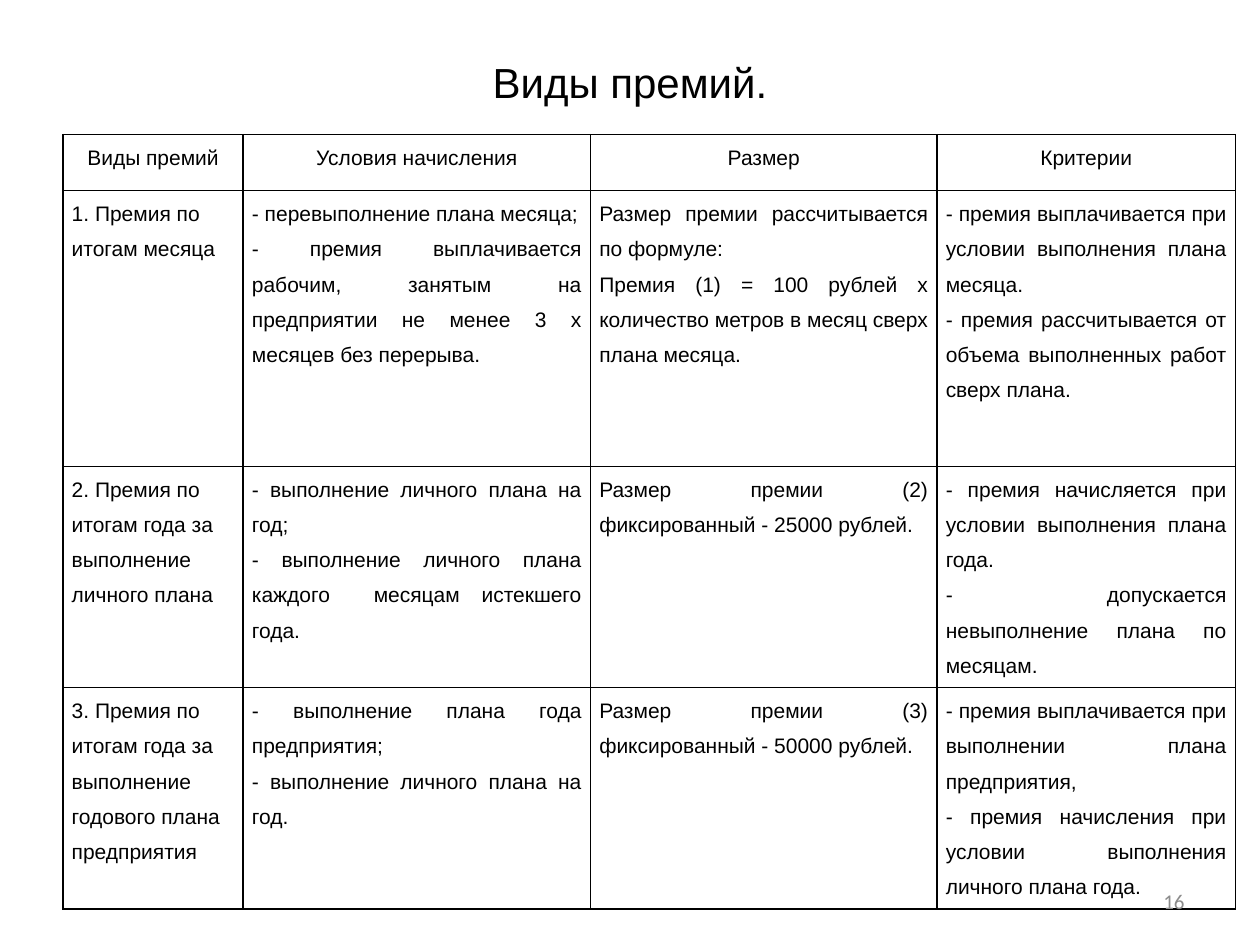
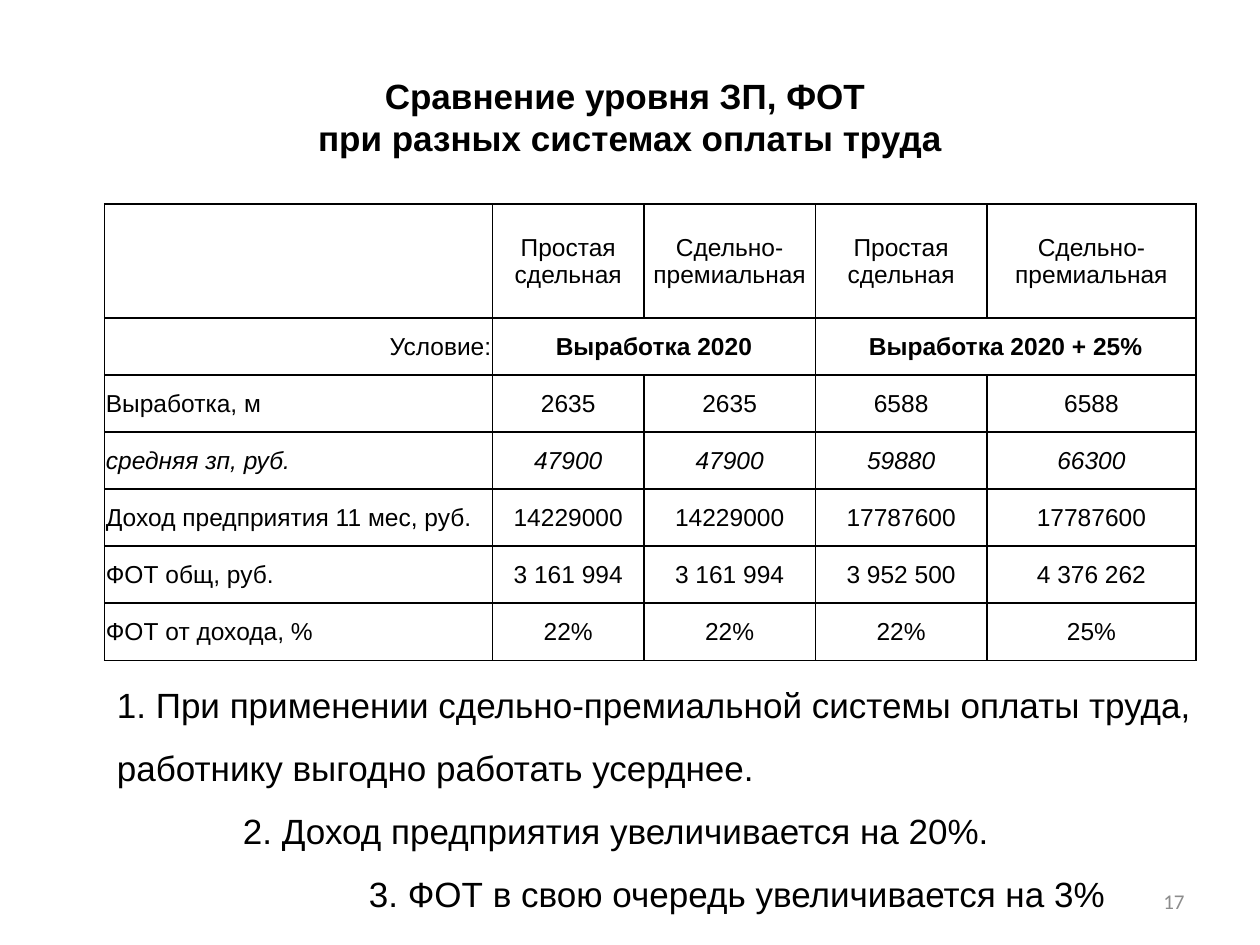
from lxml import etree
from pptx import Presentation
from pptx.dml.color import RGBColor
from pptx.enum.text import MSO_ANCHOR, PP_ALIGN
from pptx.oxml.ns import qn
from pptx.util import Pt

LEFT, CENTER, RIGHT, JUSTIFY = PP_ALIGN.LEFT, PP_ALIGN.CENTER, PP_ALIGN.RIGHT, PP_ALIGN.JUSTIFY
TOP, MIDDLE = MSO_ANCHOR.TOP, MSO_ANCHOR.MIDDLE
COLORS = {"text": "000000", "border": "000000", "number": "8C8C8C"}


def write(tf, text, size, align, color="text", font="Arial", bold=False, italic=False, spacing=None):
    tf.text = text
    for p in tf.paragraphs:
        p.alignment = align
        p.line_spacing = spacing
        for r in p.runs:
            r.font.size = Pt(size)
            r.font.name = font
            r.font.bold = bold
            r.font.italic = italic
            r.font.color.rgb = RGBColor.from_string(COLORS[color])


def add_grid(s, left, top, widths, heights, margins, anchor):
    frame = s.shapes.add_table(len(heights), len(widths), Pt(left), Pt(top),
                               Pt(sum(widths)), Pt(sum(heights)))
    table = frame.table
    table.first_row = table.horz_banding = False
    for column, width in zip(table.columns, widths):
        column.width = Pt(width)
    for row, height in zip(table.rows, heights):
        row.height = Pt(height)
    for cell in table.iter_cells():
        cell.margin_left, cell.margin_top, cell.margin_right, cell.margin_bottom = map(Pt, margins)
        cell.vertical_anchor = anchor
        cell.fill.background()
        tcPr = cell.fill._xPr
        for i, side in enumerate(("a:lnL", "a:lnR", "a:lnT", "a:lnB")):
            ln = etree.Element(qn(side), w=str(Pt(1)))
            fill = etree.SubElement(ln, qn("a:solidFill"))
            etree.SubElement(fill, qn("a:srgbClr"), val=COLORS["border"])
            tcPr.insert(i, ln)
    return table


prs = Presentation()
prs.slide_width, prs.slide_height = Pt(720), Pt(540)
titles = [
    ("Виды премий.", 50, 24, False),
    ("Сравнение уровня ЗП, ФОТ \vпри разных системах оплаты труда", 90, 20, True),
]
bonuses = [
    ["Виды премий", "Условия начисления", "Размер", "Критерии"],
    ["1. Премия по итогам месяца",
     "- перевыполнение плана месяца;\n"
     "- премия выплачивается рабочим, занятым на предприятии не менее 3 х месяцев без перерыва.",
     "Размер премии рассчитывается по формуле:\n"
     "Премия (1) = 100 рублей х количество метров в месяц сверх плана месяца.",
     "- премия выплачивается при условии выполнения плана месяца.\n"
     "- премия рассчитывается от объема выполненных работ сверх плана."],
    ["2. Премия по итогам года за выполнение личного плана",
     "- выполнение личного плана на год;\n"
     "- выполнение личного плана каждого  месяцам истекшего года.",
     "Размер премии (2) фиксированный - 25000 рублей.",
     "- премия начисляется при условии выполнения плана года.\n"
     "- допускается невыполнение плана по месяцам."],
    ["3. Премия по итогам года за выполнение годового плана предприятия",
     "- выполнение плана года предприятия;\n- выполнение личного плана на год.",
     "Размер премии (3) фиксированный - 50000 рублей.",
     "- премия выплачивается при выполнении плана предприятия,\n"
     "- премия начисления при условии выполнения личного плана года."],
]
comparison = [
    ["", "Простая сдельная", "Сдельно-премиальная", "Простая сдельная", "Сдельно-премиальная"],
    ["Условие:", "Выработка 2020", "", "Выработка 2020 + 25%", ""],
    ["Выработка, м", "2635", "2635", "6588", "6588"],
    ["средняя зп, руб.", "47900", "47900", "59880", "66300"],
    ["Доход предприятия 11 мес, руб.", "14229000", "14229000", "17787600", "17787600"],
    ["ФОТ общ, руб.", "3 161 994", "3 161 994", "3 952 500", "4 376 262"],
    ["ФОТ от дохода, %", "22%", "22%", "22%", "25%"],
]
CONDITION_ROW, SALARY_ROW = 1, 3
conclusions = [
    "1. При применении сдельно-премиальной системы оплаты труда, работнику выгодно работать усерднее.",
    "2. Доход предприятия увеличивается на 20%.",
    "3. ФОТ в свою очередь увеличивается на 3%",
]

for title, height, size, bold in titles:
    s = prs.slides.add_slide(prs.slide_layouts[5])
    sp = s.shapes.title
    sp.left, sp.top, sp.width, sp.height = Pt(36), Pt(21.6), Pt(648), Pt(height)
    sp.text_frame.vertical_anchor = MIDDLE
    write(sp.text_frame, title, size, CENTER, bold=bold)

bonus_slide, comparison_slide = prs.slides

table = add_grid(bonus_slide, 36, 77, [103, 198.5, 198, 170.5], [32, 157.5, 126.5, 126.5],
                 (5, 0, 5, 0), TOP)
for i, row in enumerate(bonuses):
    for j, text in enumerate(row):
        align = CENTER if i == 0 else LEFT if j == 0 else JUSTIFY
        write(table.cell(i, j).text_frame, text, 12, align, spacing=1.5)

table = add_grid(comparison_slide, 59.75, 116.5, [221.75, 86.5, 98, 98, 119.5],
                 [65.2] + [32.6] * 6, (0.75, 0.75, 0.75, 0), MIDDLE)
for j in (1, 3):
    table.cell(CONDITION_ROW, j).merge(table.cell(CONDITION_ROW, j + 1))
for i, row in enumerate(comparison):
    for j, text in enumerate(row):
        if text:
            align = CENTER if j else RIGHT if i == CONDITION_ROW else LEFT
            write(table.cell(i, j).text_frame, text, 14, align,
                  bold=i == CONDITION_ROW and j > 0, italic=i == SALARY_ROW)

sp = comparison_slide.shapes.add_textbox(Pt(59.75), Pt(394.5), Pt(648), Pt(112.5))
tf = sp.text_frame
tf.word_wrap = True
tf.vertical_anchor = MIDDLE
write(tf, "\n".join(conclusions), 20, LEFT, spacing=1.5)
for level, p in enumerate(tf.paragraphs):
    p._p.get_or_add_pPr().set("marL", str(Pt(72 * level)))

for number, s in enumerate(prs.slides, 16):
    sp = s.shapes.add_textbox(Pt(516), Pt(500.5), Pt(168), Pt(28.75))
    sp.text_frame.word_wrap = True
    sp.text_frame.vertical_anchor = MIDDLE
    write(sp.text_frame, str(number), 12, RIGHT, color="number", font="Calibri")

prs.save("out.pptx")
